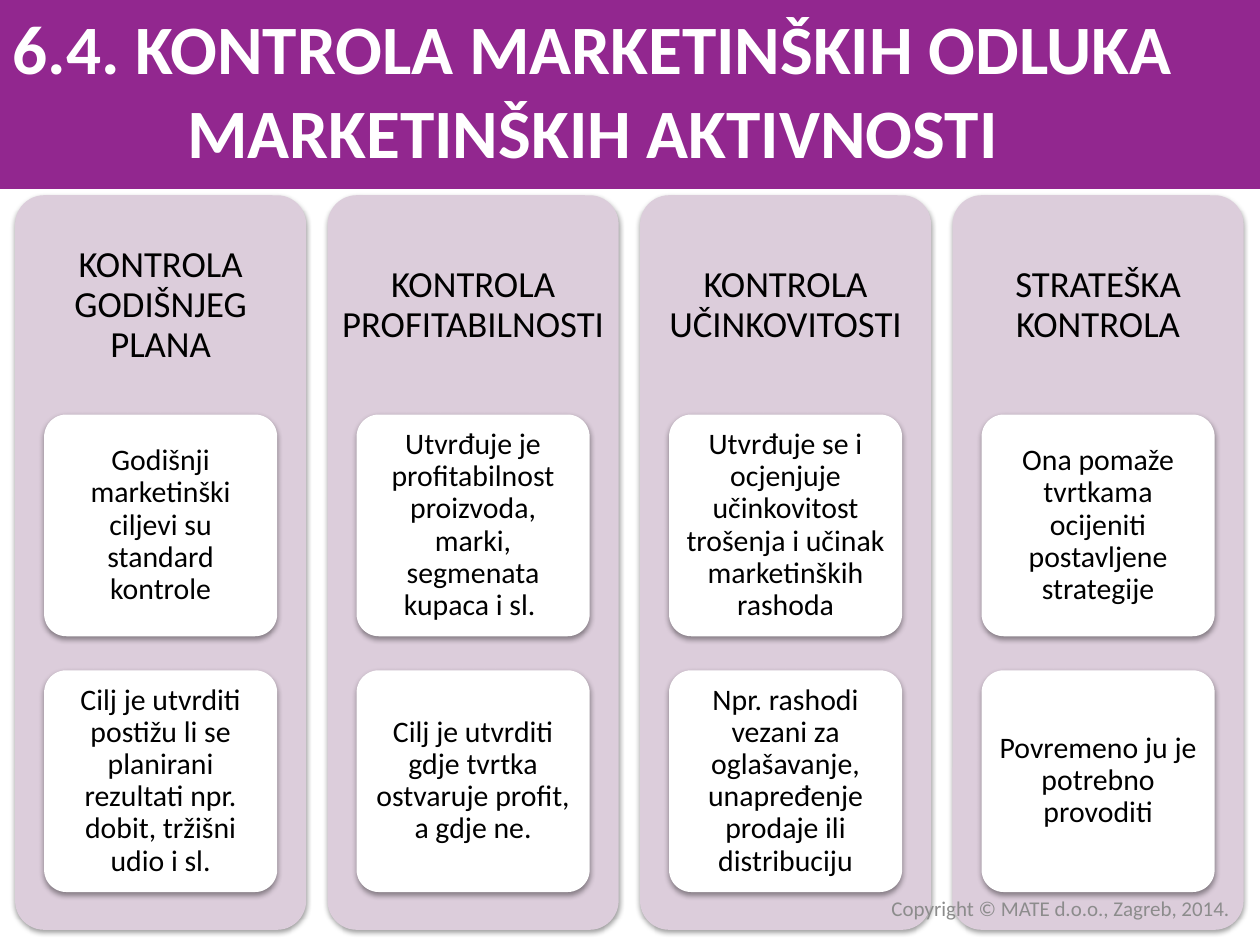
"""Build the slide on controlling marketing decisions: four columns with two cards each."""
from dataclasses import dataclass

from lxml.etree import SubElement
from pptx import Presentation
from pptx.dml.color import RGBColor
from pptx.enum.shapes import MSO_SHAPE as SHAPE
from pptx.enum.text import MSO_ANCHOR as ANCHOR, MSO_AUTO_SIZE as AUTO_SIZE, PP_ALIGN as ALIGN
from pptx.oxml.ns import qn
from pptx.util import Inches, Pt


@dataclass(frozen=True)
class Theme:
    font: str = "Calibri"
    banner: str = "92278F"
    panel: str = "DCCDDB"
    white: str = "FFFFFF"
    black: str = "000000"
    grey: str = "8C8C8C"
    title: float = 39.6
    heading: float = 21
    body: float = 17
    footer: float = 12


THEME = Theme()
LEFT, STEP = 0.12, 2.48
PANEL_TOP, PANEL_W, PANEL_H, HEADING_H = 1.55, 2.31, 5.83, 1.75
CARD_INDENT, CARD_TOP, CARD_STEP, CARD_W, CARD_H = 0.23, 3.29, 2.03, 1.85, 1.76

COLUMNS = [
    ("KONTROLA GODIŠNJEG PLANA",
     ["Godišnji marketinški ciljevi su standard kontrole",
      "Cilj je utvrditi postižu li se planirani rezultati npr. dobit, tržišni udio i sl."]),
    ("KONTROLA PROFITABILNOSTI",
     ["Utvrđuje je profitabilnost proizvoda, marki, segmenata kupaca i sl. ",
      "Cilj je utvrditi gdje tvrtka ostvaruje profit, a gdje ne."]),
    ("KONTROLA UČINKOVITOSTI",
     ["Utvrđuje se i ocjenjuje učinkovitost trošenja i učinak marketinških rashoda",
      "Npr. rashodi vezani za oglašavanje, unapređenje prodaje ili distribuciju"]),
    ("STRATEŠKA KONTROLA",
     ["Ona pomaže tvrtkama ocijeniti postavljene strategije",
      "Povremeno ju je potrebno provoditi"]),
]


def inches(*values):
    return [Inches(v) for v in values]


def write(sp, text, size, color, inset, align=ALIGN.CENTER, spacing=None, bold=False):
    """Fill a shape with one vertically centred paragraph."""
    tf = sp.text_frame
    tf.word_wrap = True
    tf.auto_size = AUTO_SIZE.NONE
    tf.vertical_anchor = ANCHOR.MIDDLE
    tf.margin_left = tf.margin_right = Inches(inset[0])
    tf.margin_top = tf.margin_bottom = Inches(inset[1])
    p = tf.paragraphs[0]
    p.text = text
    p.alignment = align
    p.line_spacing = spacing
    p.font.name = THEME.font
    p.font.size = Pt(size)
    p.font.bold = bold
    p.font.color.rgb = RGBColor.from_string(color)


def add_block(s, kind, box, color):
    """Add a filled shape without outline or shadow."""
    sp = s.shapes.add_shape(kind, *inches(*box))
    sp.shadow.inherit = False
    sp.fill.solid()
    sp.fill.fore_color.rgb = RGBColor.from_string(color)
    sp.line.fill.background()
    return sp


def add_rounded(s, box, color):
    """Add a rounded block with a soft shadow below it."""
    sp = add_block(s, SHAPE.ROUNDED_RECTANGLE, box, color)
    sp.adjustments[0] = 0.1
    effects = sp.element.spPr.find(qn("a:effectLst"))
    shadow = SubElement(effects, qn("a:outerShdw"), blurRad=str(Pt(3.1)),
                        dist=str(Pt(1.6)), dir="5400000", rotWithShape="0")
    tint = SubElement(shadow, qn("a:srgbClr"), val=THEME.black)
    SubElement(tint, qn("a:alpha"), val="38000")
    return sp


def add_title(s, text):
    """Place the title on its banner."""
    title = s.shapes.title
    banner = add_block(s, SHAPE.RECTANGLE, (0, 0, 10, 1.5), THEME.banner)
    title.element.addprevious(banner.element)
    title.left, title.top, title.width, title.height = inches(0, 0.08, 9.41, 1.25)
    write(title, text, THEME.title, THEME.white, (0.05, 0.05), bold=True)


def add_column(s, left, heading, cards):
    """Add a panel with its heading and cards."""
    add_rounded(s, (left, PANEL_TOP, PANEL_W, PANEL_H), THEME.panel)
    tb = s.shapes.add_textbox(*inches(left, PANEL_TOP, PANEL_W, HEADING_H))
    write(tb, heading, THEME.heading, THEME.black, (0.09, 0.09), spacing=0.9)
    for row, text in enumerate(cards):
        top = CARD_TOP + row * CARD_STEP
        card = add_rounded(s, (left + CARD_INDENT, top, CARD_W, CARD_H), THEME.white)
        write(card, text, THEME.body, THEME.black, (0.05, 0.04), spacing=0.9)


def add_footer(s, text):
    """Add the right-aligned copyright line."""
    tb = s.shapes.add_textbox(*inches(4.69, 7.06, 5.17, 0.3))
    write(tb, text, THEME.footer, THEME.grey, (0.1, 0.05), align=ALIGN.RIGHT)


def main():
    prs = Presentation()
    prs.slide_width, prs.slide_height = inches(10, 7.5)
    s = prs.slides.add_slide(prs.slide_layouts[5])
    add_title(s, "6.4. KONTROLA MARKETINŠKIH ODLUKA MARKETINŠKIH AKTIVNOSTI")
    for i, (heading, cards) in enumerate(COLUMNS):
        add_column(s, LEFT + i * STEP, heading, cards)
    add_footer(s, "Copyright © MATE d.o.o., Zagreb, 2014.")
    prs.save("out.pptx")


if __name__ == "__main__":
    main()
